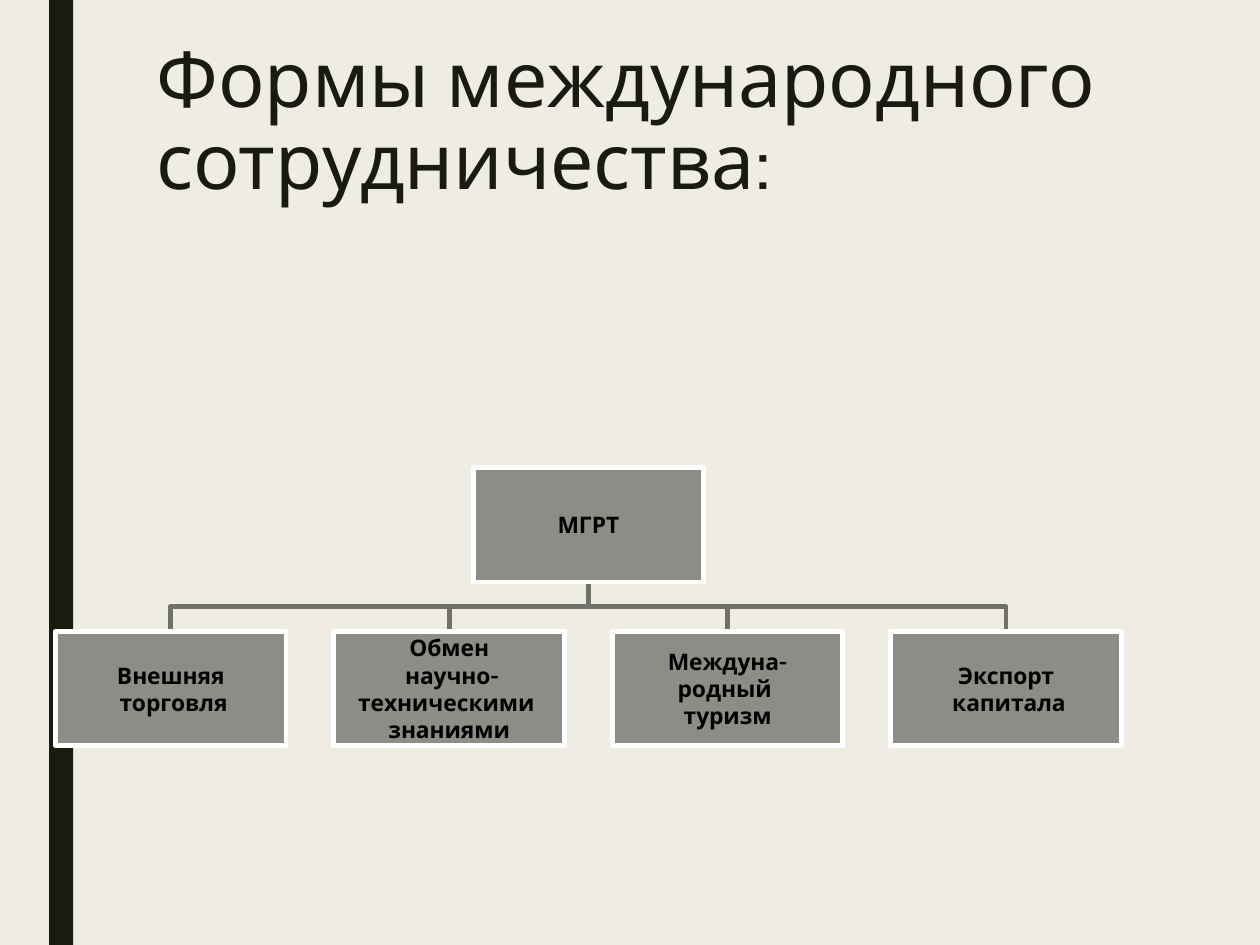
from dataclasses import dataclass

from pptx import Presentation
from pptx import util as u
from pptx.dml.color import RGBColor
from pptx.enum import shapes, text

CREAM = RGBColor(0xEF, 0xED, 0xE3)
DARK = RGBColor(0x19, 0x1B, 0x0E)
GREY = RGBColor(0x8C, 0x8D, 0x86)
LINK_GREY = RGBColor(0x70, 0x71, 0x6B)
WHITE = RGBColor(0xFF, 0xFF, 0xFF)
BLACK = RGBColor(0, 0, 0)

BOX_WIDTH, BOX_HEIGHT = 1.83, 0.91
ROOT_TOP, CHILD_TOP = 3.71, 5.01
FIRST_LEFT, CHILD_STEP = 0.44, 2.21
LINE_WIDTH = u.Pt(2.75)


@dataclass
class Node:
    left: float
    top: float
    lines: tuple[str, ...]

    @property
    def center(self) -> float:
        return self.left + BOX_WIDTH / 2


def draw_link(page, parent: Node, child: Node) -> None:
    """Draw an elbow from the bottom of the parent to the top of the child."""
    start = parent.top + BOX_HEIGHT
    middle = (start + child.top) / 2
    points = [(parent.center, middle), (child.center, middle), (child.center, child.top)]
    builder = page.shapes.build_freeform(u.Inches(parent.center), u.Inches(start))
    builder.add_line_segments([(u.Inches(x), u.Inches(y)) for x, y in points], close=False)
    link = builder.convert_to_shape()
    link.shadow.inherit = False
    link.fill.background()
    link.line.color.rgb = LINK_GREY
    link.line.width = LINE_WIDTH


def draw_node(page, node: Node) -> None:
    box = page.shapes.add_shape(
        shapes.MSO_SHAPE.RECTANGLE, u.Inches(node.left), u.Inches(node.top),
        u.Inches(BOX_WIDTH), u.Inches(BOX_HEIGHT))
    box.shadow.inherit = False
    box.fill.solid()
    box.fill.fore_color.rgb = GREY
    box.line.color.rgb = WHITE
    box.line.width = LINE_WIDTH

    frame = box.text_frame
    frame.word_wrap = True
    frame.vertical_anchor = text.MSO_ANCHOR.MIDDLE
    frame.margin_left = frame.margin_right = u.Inches(0.01)
    frame.margin_top = frame.margin_bottom = u.Inches(0.01)
    frame.text = "\n".join(node.lines)
    for para in frame.paragraphs:
        para.alignment = text.PP_ALIGN.CENTER
        para.font.name = "Karla"
        para.font.size = u.Pt(13)
        para.font.bold = True
        para.font.color.rgb = BLACK


def draw_side_bar(page) -> None:
    bar = page.shapes.add_shape(
        shapes.MSO_SHAPE.RECTANGLE, u.Inches(0.39), 0, u.Inches(0.19), u.Inches(7.5))
    bar.shadow.inherit = False
    bar.fill.solid()
    bar.fill.fore_color.rgb = DARK
    bar.line.fill.background()


def fill_title(title, words: str) -> None:
    title.left, title.top = u.Inches(1.14), u.Inches(0.28)
    title.width, title.height = u.Inches(8.52), u.Inches(1.6)
    frame = title.text_frame
    frame.text = words
    frame.word_wrap = True
    frame.auto_size = text.MSO_AUTO_SIZE.NONE
    frame.vertical_anchor = text.MSO_ANCHOR.TOP
    para = frame.paragraphs[0]
    para.alignment = text.PP_ALIGN.LEFT
    para.line_spacing = 0.89
    para.font.name = "Cabin"
    para.font.size = u.Pt(44)
    para.font.color.rgb = DARK


def main() -> None:
    deck = Presentation()
    deck.slide_width, deck.slide_height = u.Inches(10), u.Inches(7.5)
    page = deck.slides.add_slide(deck.slide_layouts[5])
    page.background.fill.solid()
    page.background.fill.fore_color.rgb = CREAM

    # Side bar and title
    draw_side_bar(page)
    fill_title(page.shapes.title, "Формы международного сотрудничества:")

    # Hierarchy: the root is centred over its children
    labels = [
        ("Внешняя", " торговля"),
        ("Обмен", " научно-", "техническими ", "знаниями"),
        ("Междуна-", "родный ", "туризм"),
        ("Экспорт", " капитала"),
    ]
    children = [Node(FIRST_LEFT + i * CHILD_STEP, CHILD_TOP, lines)
                for i, lines in enumerate(labels)]
    root = Node((children[0].left + children[-1].left) / 2, ROOT_TOP, ("МГРТ",))
    for child in reversed(children):
        draw_link(page, root, child)
    for node in [root, *children]:
        draw_node(page, node)

    deck.save("out.pptx")


if __name__ == "__main__":
    main()
